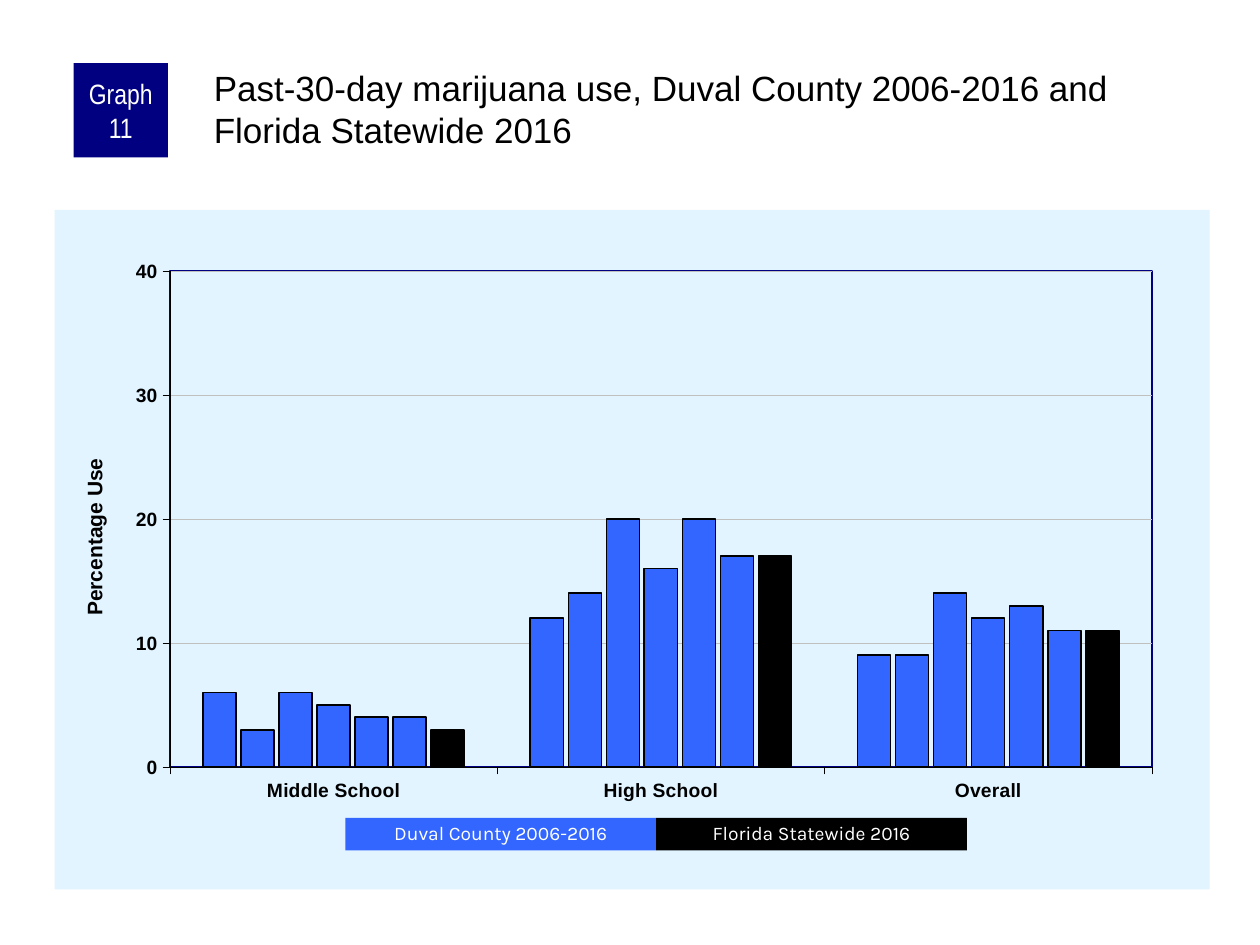
from dataclasses import dataclass

from pptx import Presentation
from pptx import util as u
from pptx.chart.data import CategoryChartData
from pptx.dml.color import RGBColor
from pptx.enum import chart as charts, shapes, text
from pptx.oxml import parse_xml
from pptx.oxml.ns import nsdecls, qn


@dataclass(frozen=True)
class Theme:
    navy: str = "000080"
    blue: str = "3366FF"
    black: str = "000000"
    white: str = "FFFFFF"
    pale: str = "E1F4FF"
    grid: str = "C0C0C0"
    body: str = "Arial"
    narrow: str = "Arial Narrow"
    legend: str = "Karla"
    title_size: float = 20
    badge_size: float = 16
    axis_title_size: float = 12
    label_size: float = 11
    cell: int = u.Inches(1) // 12  # side of one grid cell


def format_font(font, size, color, name, bold=False):
    font.size, font.name, font.bold = u.Pt(size), name, bold
    font.color.rgb = RGBColor.from_string(color)


def write_text(frame, content, *, size, color, font, align=text.PP_ALIGN.LEFT,
               anchor=text.MSO_ANCHOR.TOP, margins=(0.1, 0.05, 0.1, 0.05), spacing=1.0):
    frame.word_wrap = True
    frame.auto_size = text.MSO_AUTO_SIZE.NONE
    frame.vertical_anchor = anchor
    (frame.margin_left, frame.margin_top,
     frame.margin_right, frame.margin_bottom) = map(u.Inches, margins)
    paragraph = frame.paragraphs[0]
    paragraph.alignment, paragraph.line_spacing = align, spacing
    paragraph.space_before = u.Pt(0)
    run = paragraph.add_run()
    run.text = content
    format_font(run.font, size, color, font)


def format_line(line, color, width):
    line.color.rgb = RGBColor.from_string(color)
    line.width = u.Pt(width)


def area_xml(fill, line):
    return parse_xml(f"<c:spPr {nsdecls('c', 'a')}>{fill}{line}</c:spPr>")


def set_layout(parent, index, **values):
    """Place a chart part by shares of the chart's size."""
    old = parent.find(qn("c:layout"))
    if old is not None:
        parent.remove(old)
    items = "".join(f'<c:{key} val="{value}"/>' for key, value in values.items())
    parent.insert(index, parse_xml(
        f"<c:layout {nsdecls('c')}><c:manualLayout>{items}</c:manualLayout></c:layout>"))


class SlideBuilder:
    def __init__(self, presentation, theme):
        self.theme = theme
        self.slide = presentation.slides.add_slide(presentation.slide_layouts[5])

    def box(self, *cells):
        """Turn grid columns and rows into lengths."""
        return [u.Emu(round(cell * self.theme.cell)) for cell in cells]

    def title(self, content, *cells):
        shape = self.slide.shapes.title
        shape.left, shape.top, shape.width, shape.height = self.box(*cells)
        write_text(shape.text_frame, content, size=self.theme.title_size,
                   color=self.theme.black, font=self.theme.body,
                   margins=(0.03, 0.03, 0, 0))

    def label(self, content, fill, *cells, **style):
        shape = self.slide.shapes.add_shape(shapes.MSO_SHAPE.RECTANGLE, *self.box(*cells))
        shape.shadow.inherit = False
        shape.fill.solid()
        shape.fill.fore_color.rgb = RGBColor.from_string(fill)
        shape.line.fill.background()
        write_text(shape.text_frame, content, color=self.theme.white,
                   align=text.PP_ALIGN.CENTER, anchor=text.MSO_ANCHOR.MIDDLE, **style)

    def column_chart(self, categories, rows, colors, axis_title, *cells):
        theme = self.theme
        data = CategoryChartData(number_format="0")
        data.categories = categories
        for number, row in enumerate(rows, 1):
            data.add_series(f"Series {number}", row)
        chart = self.slide.shapes.add_chart(
            charts.XL_CHART_TYPE.COLUMN_CLUSTERED, *self.box(*cells), data).chart
        chart.has_legend = chart.has_title = False
        format_font(chart.font, 8, theme.black, theme.body)

        # Bars
        plot = chart.plots[0]
        plot.gap_width, plot.overlap, plot.vary_by_categories = 200, -15, False
        for series, color in zip(plot.series, colors):
            series.format.fill.solid()
            series.format.fill.fore_color.rgb = RGBColor.from_string(color)
            format_line(series.format.line, theme.black, 1)

        # Axes
        for axis in (chart.category_axis, chart.value_axis):
            axis.major_tick_mark = charts.XL_TICK_MARK.OUTSIDE
            axis.minor_tick_mark = charts.XL_TICK_MARK.NONE
            format_font(axis.tick_labels.font, theme.label_size, theme.black,
                        theme.body, bold=True)
            format_line(axis.format.line, theme.black, 0.25)
        axis = chart.value_axis
        axis.minimum_scale, axis.maximum_scale, axis.major_unit = 0, 40, 10
        axis.has_major_gridlines = True
        format_line(axis.major_gridlines.format.line, theme.grid, 0.25)
        run = axis.axis_title.text_frame.paragraphs[0].add_run()
        run.text = axis_title
        format_font(run.font, theme.axis_title_size, theme.black, theme.body, bold=True)
        set_layout(axis.axis_title._element, 1, xMode="edge", yMode="edge", x=0.02, y=0.36)

        # Chart background and plot border
        element = chart._chartSpace.find(qn("c:chart"))
        element.addnext(area_xml(
            f'<a:solidFill><a:srgbClr val="{theme.pale}"/></a:solidFill>',
            "<a:ln><a:noFill/></a:ln>"))
        area = element.find(qn("c:plotArea"))
        set_layout(area, 0, layoutTarget="inner", xMode="edge", yMode="edge",
                   x=0.1, y=0.09, w=0.85, h=0.73)
        area.append(area_xml(
            "<a:noFill/>",
            f'<a:ln w="{u.Pt(1)}"><a:solidFill><a:srgbClr val="{theme.navy}"/>'
            "</a:solidFill></a:ln>"))


def main():
    theme = Theme()
    presentation = Presentation()
    presentation.slide_width, presentation.slide_height = u.Inches(10), u.Inches(7.5)
    builder = SlideBuilder(presentation, theme)

    # Heading
    builder.title("Past-30-day marijuana use, Duval County 2006-2016 and "
                  "Florida Statewide 2016", 20, 6, 95, 10)

    # Chart: six county surveys, then the state
    surveys = [(6, 12, 9), (3, 14, 9), (6, 20, 14), (5, 16, 12),
               (4, 20, 13), (4, 17, 11), (3, 17, 11)]
    builder.column_chart(["Middle School", "High School", "Overall"], surveys,
                         [theme.blue] * 6 + [theme.black], "Percentage Use",
                         5.2, 20, 110, 64.7)

    # Graph number
    builder.label("Graph 11", theme.navy, 7, 6, 9, 9, size=theme.badge_size,
                  font=theme.narrow, margins=(0.05, 0, 0.05, 0))

    # Legend
    left, width = 32.9, 29.6
    entries = [("Duval County 2006-2016", theme.blue),
               ("Florida Statewide 2016", theme.black)]
    for position, (name, color) in enumerate(entries):
        builder.label(name, color, left + position * width, 77.9, width, 3.1,
                      size=theme.label_size, font=theme.legend, spacing=0.9)

    presentation.save("out.pptx")


if __name__ == "__main__":
    main()
